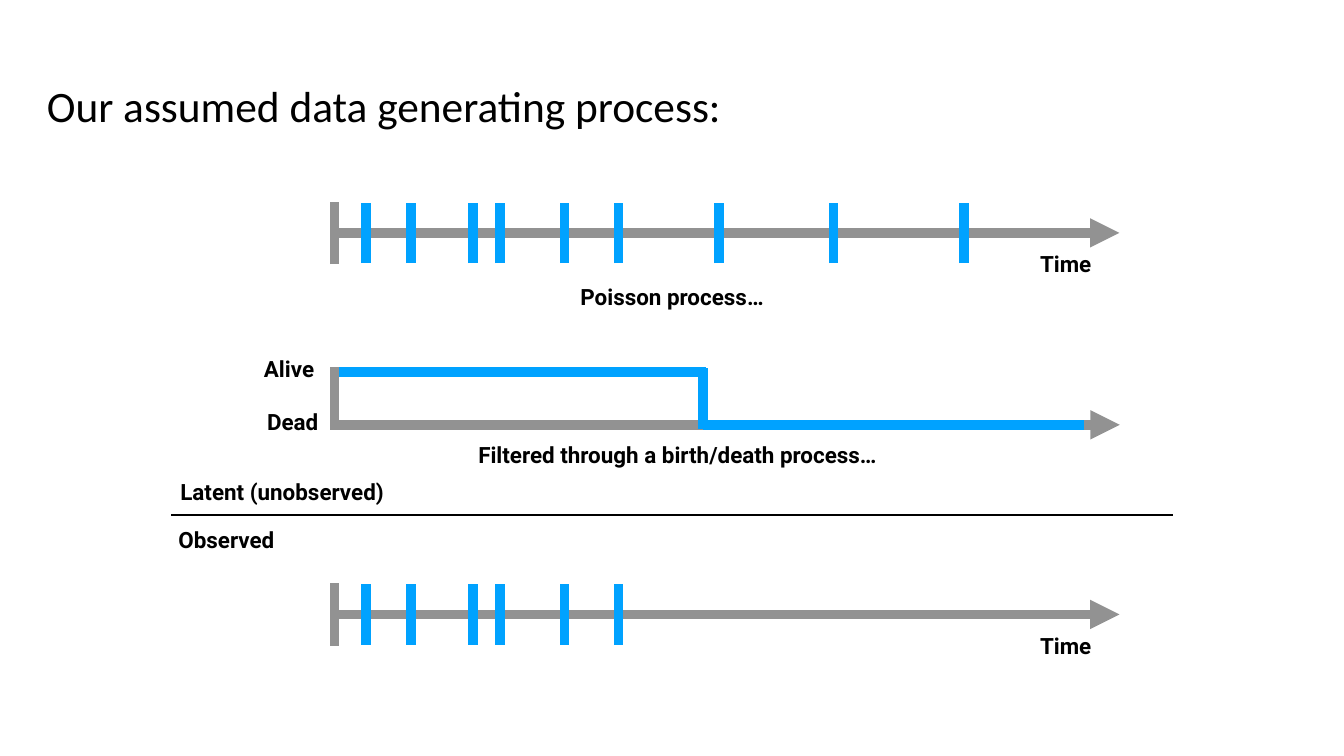
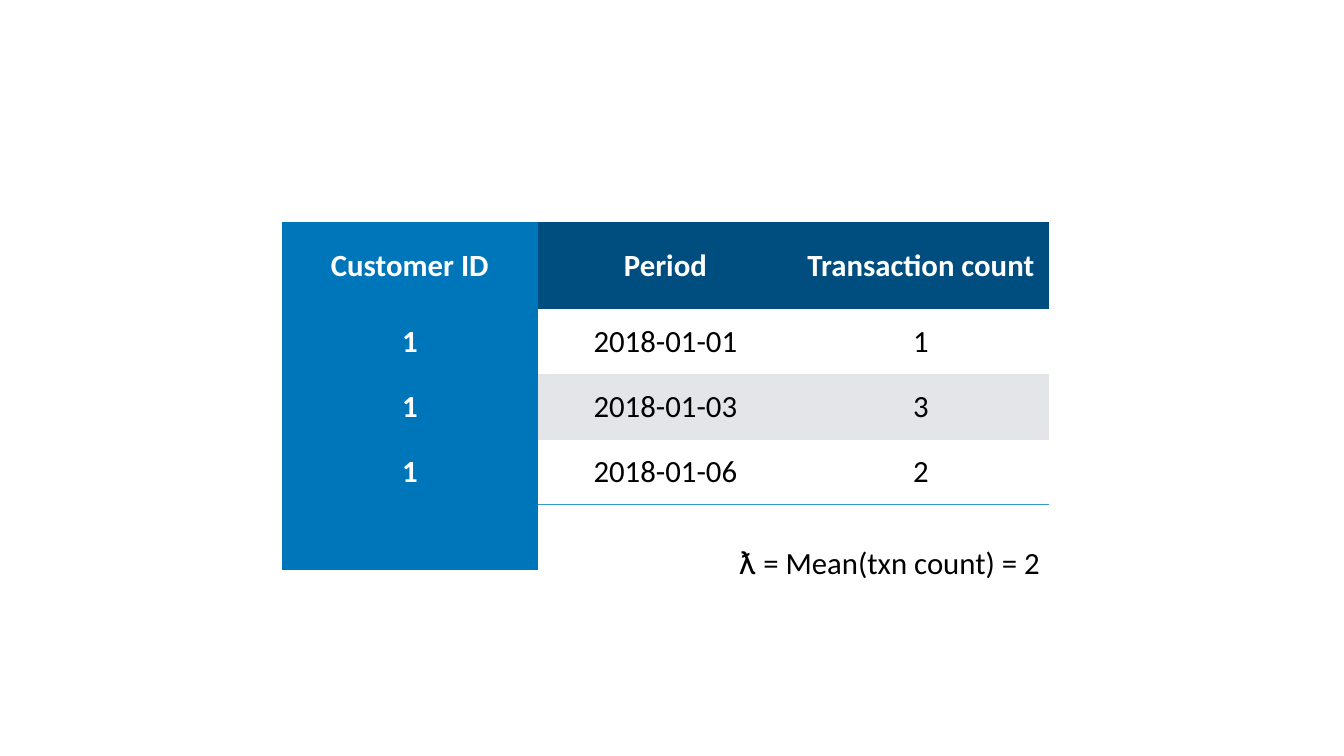
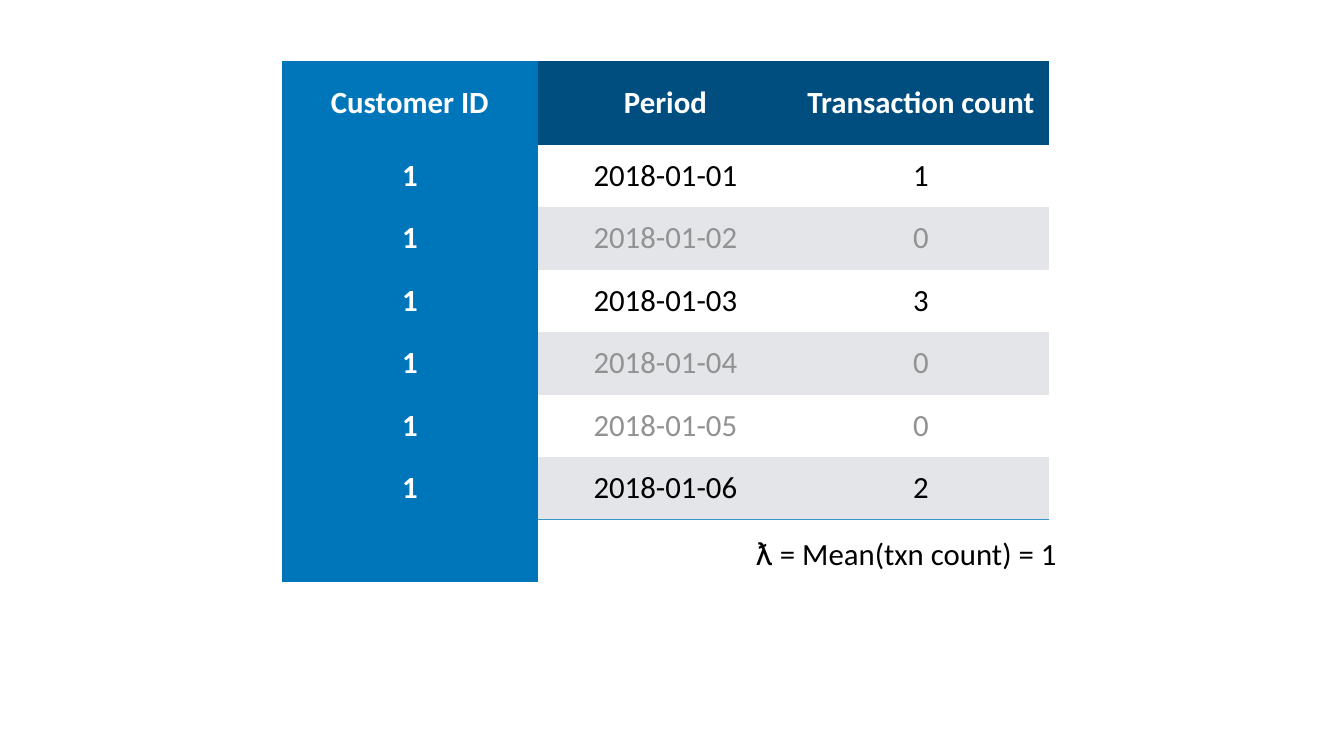
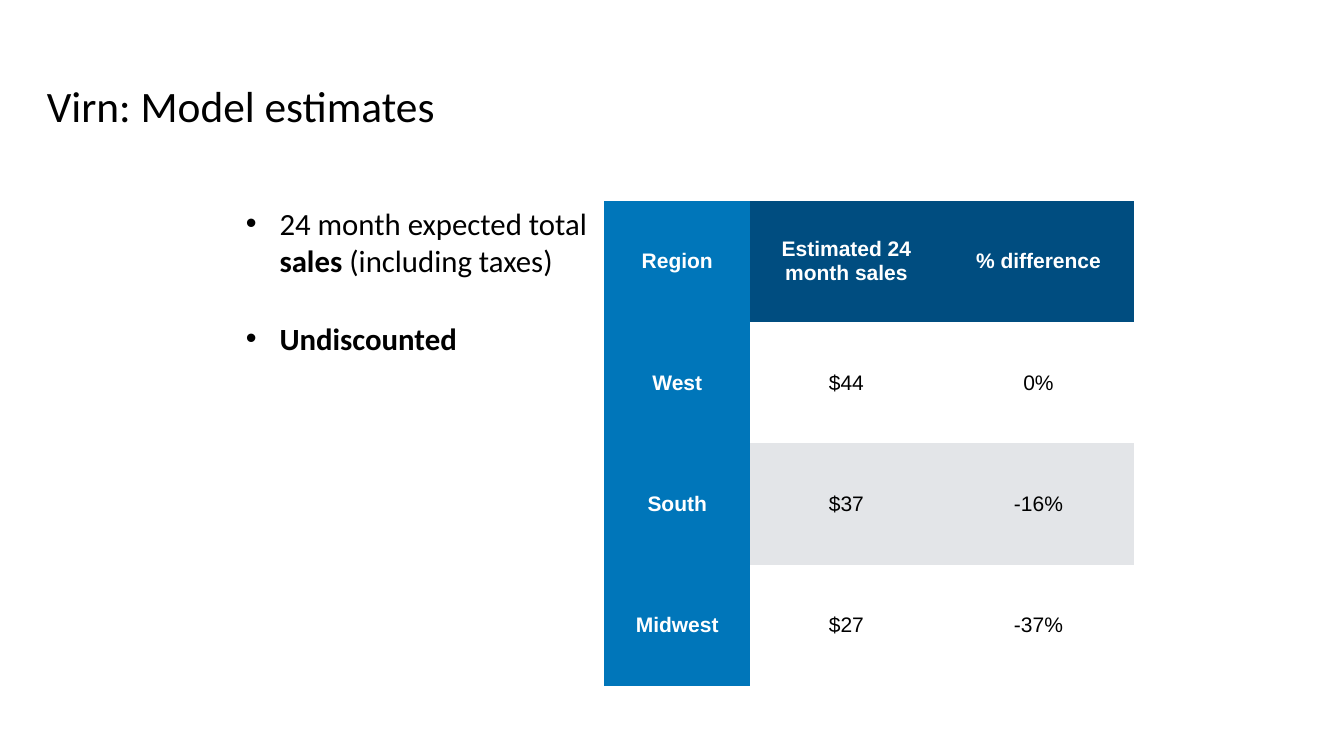
from dataclasses import dataclass

from lxml.etree import SubElement
from pptx import Presentation
from pptx.dml.color import RGBColor
from pptx.enum.shapes import MSO_CONNECTOR
from pptx.enum.text import MSO_ANCHOR, MSO_AUTO_SIZE, PP_ALIGN
from pptx.oxml.ns import qn
from pptx.util import Cm, Pt

COLORS = {
    "background": "FFFFFF",
    "text": "000000",
    "muted": "929292",
    "axis": "929292",
    "event": "00A2FF",
    "header": "004D80",
    "first_column": "0076BA",
    "band": "E3E5E8",
    "rule": "3797C6",
    "light": "FFFFFF",
}
TITLE_FONT = {"name": "Calibri", "size": Pt(62), "bold": False}
BODY_FONT = {"name": "Calibri", "size": Pt(44), "bold": False}
LABEL_FONT = {"name": "Roboto", "size": Pt(32), "bold": True}
REGION_FONT = {"name": "Arial", "size": Pt(30), "bold": False}
LABEL_HEIGHT = 1.75
BAR_WIDTH = 14
NO_STYLE_NO_GRID = "{2D5ABB26-0587-4C30-8999-92F81FD0307C}"
OBSERVED_EVENTS = [1.8, 4.09, 7.21, 8.58, 11.81, 14.53]
LATER_EVENTS = [19.58, 25.37, 31.95]
TRANSACTION_HEADER = ("Customer ID", "Period", "Transaction count")
EMPTY_ROW = ("", "", "")


@dataclass(frozen=True)
class Box:
    """Hold a rectangle in centimetres."""

    left: float
    top: float
    width: float
    height: float

    def lengths(self):
        """Return the four measures as lengths."""
        return [Cm(value) for value in (self.left, self.top, self.width, self.height)]


TITLE_BOX = Box(2.16, 1.07, 63.4, 8.43)


def set_attributes(target, values):
    """Set every attribute named in a dict."""
    for name, value in values.items():
        setattr(target, name, value)


def rgb(color):
    """Return a named colour."""
    return RGBColor.from_string(COLORS[color])


def add_runs(paragraph, runs, font, color="text"):
    """Write runs of text, each with its own changes to the font."""
    for text, changes in runs:
        run = paragraph.add_run()
        run.text = text
        set_attributes(run.font, {**font, **changes})
        run.font.color.rgb = rgb(color)


def format_frame(frame, anchor=MSO_ANCHOR.MIDDLE):
    """Give a text frame the shared margins, wrap and anchor."""
    set_attributes(frame, {
        "margin_left": Cm(0.2),
        "margin_right": Cm(0.2),
        "margin_top": Cm(0.2),
        "margin_bottom": Cm(0.2),
        "word_wrap": True,
        "auto_size": MSO_AUTO_SIZE.NONE,
        "vertical_anchor": anchor,
    })


def add_text(slide, box, runs, font, align=PP_ALIGN.LEFT):
    """Add a text box of one paragraph."""
    frame = slide.shapes.add_textbox(*box.lengths()).text_frame
    format_frame(frame)
    paragraph = frame.paragraphs[0]
    paragraph.alignment = align
    add_runs(paragraph, runs, font)


def add_label(slide, left, top, width, text, align=PP_ALIGN.CENTER):
    """Add a bold diagram label."""
    box = Box(left, top, width, LABEL_HEIGHT)
    add_text(slide, box, [(text, {})], LABEL_FONT, align)


def add_line(slide, start, end, color, width=BAR_WIDTH, arrow=False):
    """Draw a straight line, with an arrowhead at its end if wanted."""
    points = [Cm(value) for value in (*start, *end)]
    line = slide.shapes.add_connector(MSO_CONNECTOR.STRAIGHT, *points)
    line.line.color.rgb = rgb(color)
    line.line.width = Pt(width)
    if arrow:
        SubElement(line.line._get_or_add_ln(), qn("a:tailEnd"), type="triangle")
    SubElement(line._element.spPr, qn("a:effectLst"))


def add_titled_slide(presentation, title):
    """Add a title-only slide and format its title."""
    slide = presentation.slides.add_slide(presentation.slide_layouts[5])
    shape = slide.shapes.title
    set_attributes(shape, dict(zip(("left", "top", "width", "height"), TITLE_BOX.lengths())))
    format_frame(shape.text_frame)
    paragraph = shape.text_frame.paragraphs[0]
    paragraph.alignment = PP_ALIGN.LEFT
    add_runs(paragraph, [(title, {})], TITLE_FONT)
    return slide


def add_timeline(slide, box, events):
    """Draw a time axis with a start bar and one tick for each event."""
    middle = box.top + box.height / 2
    bottom = box.top + box.height
    start = box.left + 0.22
    add_line(slide, (box.left, middle), (box.left + box.width, middle), "axis", arrow=True)
    add_line(slide, (start, bottom), (start, box.top), "axis")
    for event in events:
        tick = box.left + event
        add_line(slide, (tick, bottom - 0.05), (tick, box.top + 0.05), "event")
    add_label(slide, box.left + box.width - 4.24, middle + 0.67, 3.07, "Time")


def add_life_chart(slide, box):
    """Draw the step from alive to dead above a time axis."""
    start = box.left + 0.22
    death = box.left + 18.8
    alive = box.top + 0.25
    dead = box.top + box.height - 0.23
    bottom = box.top + box.height
    add_line(slide, (box.left, dead), (box.left + box.width, dead), "axis", arrow=True)
    add_line(slide, (start, bottom), (start, box.top), "axis")
    add_label(slide, box.left - 3.58, alive - 1.04, 3.02, "Alive")
    add_label(slide, box.left - 3.51, dead - 1.04, 3.25, "Dead")
    add_line(slide, (death + 0.15, alive), (start + 0.24, alive), "event")
    add_line(slide, (death, bottom - 0.03), (death, box.top + 0.05), "event")
    add_line(slide, (box.left + box.width - 1.8, dead), (death, dead), "event")


def add_top_border(cell):
    """Draw a thin rule along the top of a cell."""
    properties = cell._tc.get_or_add_tcPr()
    border = SubElement(properties, qn("a:lnT"), w=str(Pt(1)))
    fill = SubElement(border, qn("a:solidFill"))
    SubElement(fill, qn("a:srgbClr"), val=COLORS["rule"])
    properties.insert(0, border)


def cell_colors(row_index, column_index, row):
    """Return the fill and text colours of a table cell."""
    if column_index == 0:
        return "first_column", "light"
    if row_index == 0:
        return "header", "light"
    fill = "band" if row_index % 2 == 0 and any(row) else "background"
    return fill, "muted" if row[-1] == "0" else "text"


def fill_cell(cell, text, fill, color, font):
    """Fill and format one table cell."""
    set_attributes(cell, {
        "margin_left": Cm(0.15),
        "margin_right": Cm(0.15),
        "margin_top": Cm(0.15),
        "margin_bottom": Cm(0.15),
        "vertical_anchor": MSO_ANCHOR.MIDDLE,
    })
    cell.fill.solid()
    cell.fill.fore_color.rgb = rgb(fill)
    paragraph = cell.text_frame.paragraphs[0]
    paragraph.alignment = PP_ALIGN.CENTER
    if text:
        add_runs(paragraph, [(text, {"bold": color == "light"})], font, color)


def add_banded_table(slide, box, rows, first_width, header_height, font):
    """Add a table with a coloured header and first column and banded rows."""
    column_count = len(rows[0])
    table = slide.shapes.add_table(len(rows), column_count, *box.lengths()).table
    set_attributes(table, {"first_row": False, "horz_banding": False})
    table._tbl.tblPr.find(qn("a:tableStyleId")).text = NO_STYLE_NO_GRID
    other_width = (box.width - first_width) / (column_count - 1)
    other_height = (box.height - header_height) / (len(rows) - 1)
    for index, column in enumerate(table.columns):
        column.width = Cm(other_width if index else first_width)
    for row_index, row in enumerate(rows):
        table.rows[row_index].height = Cm(other_height if row_index else header_height)
        for column_index, text in enumerate(row):
            cell = table.cell(row_index, column_index)
            fill_cell(cell, text, *cell_colors(row_index, column_index, row), font)
            if column_index and not any(row):
                add_top_border(cell)


def add_bullets(slide, box, items):
    """Add a bulleted list with space between its items."""
    frame = slide.shapes.add_textbox(*box.lengths()).text_frame
    format_frame(frame, MSO_ANCHOR.TOP)
    for index, runs in enumerate(items):
        paragraph = frame.add_paragraph() if index else frame.paragraphs[0]
        paragraph.space_before = Pt(59 if index else 0)
        properties = paragraph._p.get_or_add_pPr()
        properties.set("marL", str(Cm(1.7)))
        properties.set("indent", str(Cm(-1.7)))
        SubElement(properties, qn("a:buFont"), typeface="Arial")
        SubElement(properties, qn("a:buChar"), char="•")
        add_runs(paragraph, runs, BODY_FONT)


def build_process_slide(presentation):
    """Build the slide on the data generating process."""
    slide = add_titled_slide(presentation, "Our assumed data generating process:")
    add_timeline(slide, Box(16.64, 10.16, 39.78, 3.15), OBSERVED_EVENTS + LATER_EVENTS)
    add_life_chart(slide, Box(16.64, 18.49, 39.8, 3.15))
    add_timeline(slide, Box(16.64, 29.39, 39.78, 3.15), OBSERVED_EVENTS)
    add_line(slide, (8.64, 25.96), (59.11, 25.96), "text", width=2)
    add_label(slide, 8.89, 23.88, 11.18, "Latent (unobserved)", PP_ALIGN.LEFT)
    add_label(slide, 8.79, 26.31, 5.61, "Observed", PP_ALIGN.LEFT)
    add_label(slide, 28.63, 14.07, 10.49, "Poisson process…")
    add_label(slide, 23.16, 22.05, 22, "Filtered through a birth/death process…")


def build_transaction_slide(presentation, box, header_height, counts, mean, mean_box):
    """Build a slide with a table of transaction counts and their mean."""
    slide = presentation.slides.add_slide(presentation.slide_layouts[6])
    records = [("1", f"2018-01-{day:02d}", str(count)) for day, count in counts.items()]
    rows = [TRANSACTION_HEADER, *records, EMPTY_ROW]
    add_banded_table(slide, box, rows, box.width / 3, header_height, BODY_FONT)
    runs = [("ƛ", {"name": "Roboto"}), (f" = Mean(txn count) = {mean}", {})]
    add_text(slide, mean_box, runs, BODY_FONT)


def build_estimates_slide(presentation):
    """Build the slide with the model estimates by region."""
    slide = add_titled_slide(presentation, "Virn: Model estimates")
    rows = [
        ("Region", "Estimated 24 month sales", "% difference"),
        ("West", "$44", "0%"),
        ("South", "$37", "-16%"),
        ("Midwest", "$27", "-37%"),
    ]
    add_banded_table(slide, Box(30.45, 10.11, 26.73, 24.48), rows, 7.37, 6.12, REGION_FONT)
    add_bullets(slide, Box(12.19, 10.11, 18.42, 24.56), [
        [("24 month expected total ", {}), ("sales", {"bold": True}), (" (including taxes)", {})],
        [("Undiscounted", {"bold": True})],
    ])


def main():
    """Build and save the presentation."""
    presentation = Presentation()
    set_attributes(presentation, {"slide_width": Cm(67.74), "slide_height": Cm(38.1)})
    build_process_slide(presentation)
    build_transaction_slide(
        presentation, Box(14.22, 11.2, 38.64, 17.51), 4.39,
        {1: 1, 3: 3, 6: 2}, 2, Box(37.06, 27.18, 17.5, 2.34),
    )
    build_transaction_slide(
        presentation, Box(14.22, 3.07, 38.64, 26.27), 4.22,
        {1: 1, 2: 0, 3: 3, 4: 0, 5: 0, 6: 2}, 1, Box(37.9, 26.7, 17.5, 2.34),
    )
    build_estimates_slide(presentation)
    presentation.save("out.pptx")


if __name__ == "__main__":
    main()
